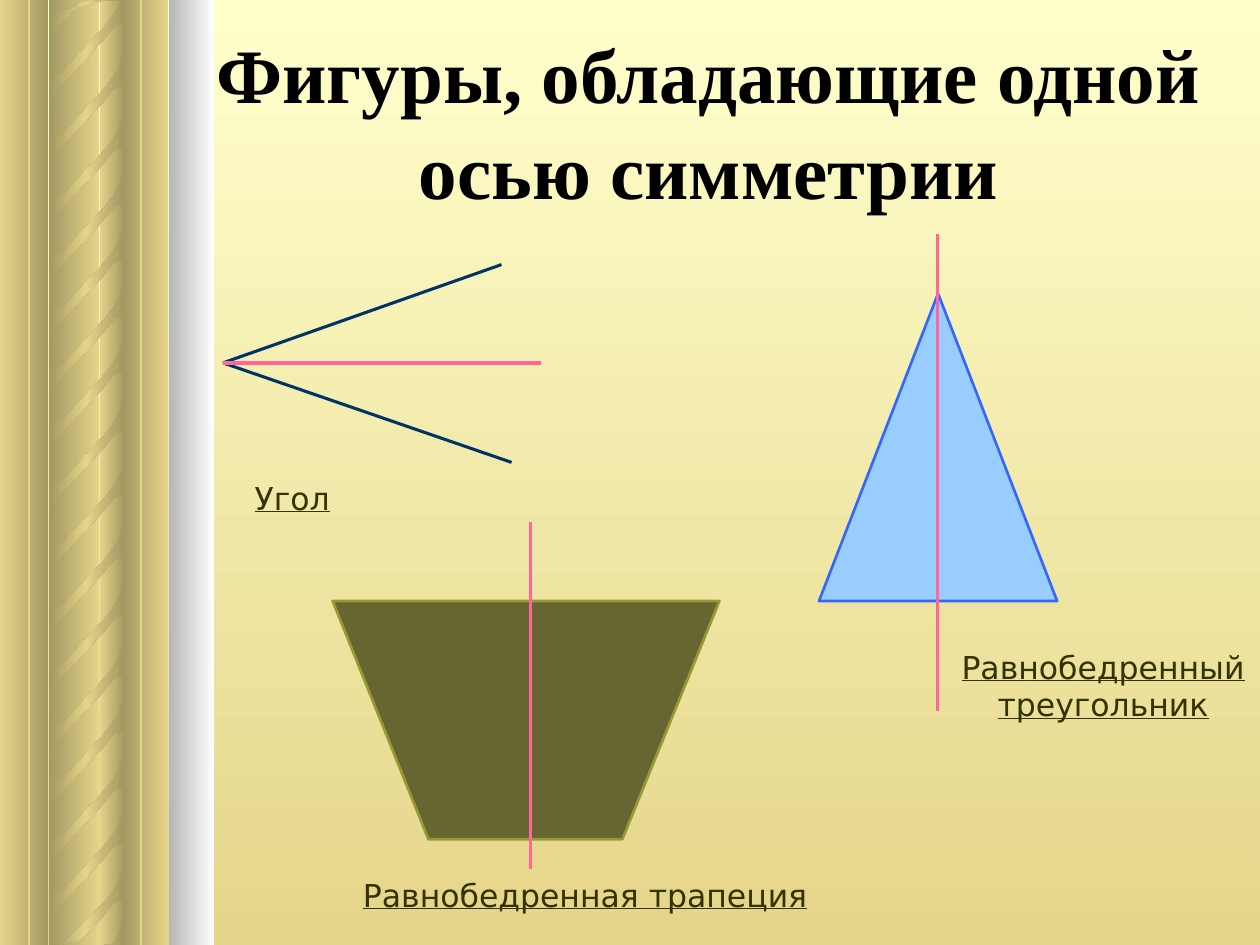
from copy import deepcopy

from pptx import Presentation
from pptx import util as u
from pptx.dml.color import RGBColor
from pptx.enum import shapes, text
from pptx.oxml import ns, xmlchemy

WIDTH, HEIGHT = 10, 7.5
COLORS = {
    "cream": "FFFFCC", "gold": "E5D58A", "bronze": "A49863",
    "silver": "B6B6B6", "white": "FFFFFF", "black": "000000",
    "label": "333300", "axis": "FF6699", "ray": "003366",
    "triangle": "99CCFF", "triangle_edge": "3366FF",
    "trapezoid": "666633", "trapezoid_edge": "999933",
}
COLUMN_BANDS = [
    (0.79, 0.2, "gold", "bronze"), (0, 0.38, "gold", "bronze"),
    (0.39, 0.4, "bronze", "gold"), (0.98, 0.35, "bronze", "gold"),
]
TWIST_TOPS = [
    (0, HEIGHT / 2, [-0.61, -0.12, 0.37, 0.86, 1.31, 1.75, 2.2, 2.64]),
    (0, HEIGHT, [3.12]),
    (3.73, HEIGHT, [3.62, 4.11, 4.58, 5.05, 5.49, 5.94, 6.38, 6.83, 7.25]),
]
TWIST = [
    (0.98, 0.09), (0.98, 0.33), (0.97, 0.32), (0.93, 0.32), (0.91, 0.33),
    (0.88, 0.36), (0.81, 0.45), (0.64, 0.63), (0.47, 0.82), (0.44, 0.87),
    (0.41, 0.93), (0.4, 1.01), (0.39, 1.12), (0.39, 0.63), (0.39, 0.68),
    (0.4, 0.7), (0.42, 0.71), (0.44, 0.71), (0.46, 0.71), (0.49, 0.7),
    (0.83, 0.33), (0.9, 0.24), (0.93, 0.19), (0.95, 0.14), (0.97, 0.06),
    (0.98, 0), (0.98, 0.2),
]


def rgb(name):
    """Return a named colour."""
    return RGBColor.from_string(COLORS[name])


def apply_gradient(fill, element, names, angle=0):
    """Spread the named colours evenly over a linear gradient."""
    fill.gradient()
    fill.gradient_angle = angle
    stops = element.find(".//" + ns.qn("a:gsLst"))
    for _ in names[2:]:
        stops.append(deepcopy(stops[-1]))
    for index, (stop, name) in enumerate(zip(fill.gradient_stops, names)):
        stop.color.rgb = rgb(name)
        stop.position = index / (len(names) - 1)


def paint(shape, *fills, edge=None):
    """Give a shape a solid or gradient fill and an optional outline."""
    shape.shadow.inherit = False
    if len(fills) > 1:
        apply_gradient(shape.fill, shape.element, fills)
    else:
        shape.fill.solid()
        shape.fill.fore_color.rgb = rgb(fills[0])
    if edge:
        shape.line.color.rgb = rgb(edge)
        shape.line.width = u.Pt(1.5)
    else:
        shape.line.fill.background()


def add_preset(slide, kind, left, top, width, height, *fills, edge=None):
    """Add a painted preset shape."""
    box = [u.Inches(value) for value in (left, top, width, height)]
    paint(slide.shapes.add_shape(kind, *box), *fills, edge=edge)


def add_outline(slide, points, *fills, edge=None):
    """Add a painted closed polygon."""
    start, *rest = [(u.Inches(x), u.Inches(y)) for x, y in points]
    builder = slide.shapes.build_freeform(*start, scale=1.0)
    builder.add_line_segments(rest, close=True)
    paint(builder.convert_to_shape(), *fills, edge=edge)


def add_line(slide, start, end, color, width):
    """Add a straight line without shadow."""
    ends = [u.Inches(value) for value in (*start, *end)]
    line = slide.shapes.add_connector(shapes.MSO_CONNECTOR.STRAIGHT, *ends)
    line.line.color.rgb = rgb(color)
    line.line.width = u.Pt(width)
    line.element.spPr.append(xmlchemy.OxmlElement("a:effectLst"))


def write(shape, lines, size=18, font="DejaVu Sans", color="label",
          bold=False, underline=True, wrap=True, spacing=1.0):
    """Write centred paragraphs in one format."""
    frame = shape.text_frame
    frame.word_wrap = wrap
    frame.auto_size = text.MSO_AUTO_SIZE.NONE
    frame.text = "\n".join(lines)
    for paragraph in frame.paragraphs:
        paragraph.alignment = text.PP_ALIGN.CENTER
        paragraph.line_spacing = spacing
        style = paragraph.runs[0].font
        style.size, style.name = u.Pt(size), font
        style.bold, style.underline = bold, underline
        style.color.rgb = rgb(color)


def add_label(slide, left, top, width, height, *lines, wrap=True):
    """Add an underlined caption."""
    box = [u.Inches(value) for value in (left, top, width, height)]
    write(slide.shapes.add_textbox(*box), lines, wrap=wrap)


def add_column(slide):
    """Draw the twisted column along the left edge."""
    rectangle = shapes.MSO_SHAPE.RECTANGLE
    for left, width, *fills in COLUMN_BANDS:
        add_preset(slide, rectangle, left, 0, width, HEIGHT, *fills)
    for upper, lower, tops in TWIST_TOPS:
        for top in tops:
            points = [(x, min(max(top + y, upper), lower)) for x, y in TWIST]
            add_outline(slide, points, "bronze", "gold", "bronze")
    add_preset(slide, rectangle, 1.34, 0, 0.36, HEIGHT, "silver", "white")
    for x in (0.23, 1.12):
        add_line(slide, (x, 0), (x, HEIGHT), "gold", 1)


def add_title(slide):
    """Place and format the title."""
    title = slide.shapes.title
    title.left, title.top = u.Inches(1.53), u.Inches(0.28)
    title.width, title.height = u.Inches(8.19), u.Inches(1.25)
    write(title, ["Фигуры, обладающие одной осью симметрии"], size=44,
          font="Times New Roman", color="black", bold=True,
          underline=False, spacing=1.04)
    title.text_frame.margin_top = u.Inches(0.13)
    title.text_frame.vertical_anchor = text.MSO_ANCHOR.MIDDLE


def add_figures(slide):
    """Draw the three figures with their captions and axes."""
    vertex = (1.77, 2.88)
    add_label(slide, 2.4, 6.9, 4.49, 0.4, "Равнобедренная трапеция")
    add_label(slide, 7.51, 5.09, 2.49, 0.7, "Равнобедренный", "треугольник",
              wrap=False)
    add_preset(slide, shapes.MSO_SHAPE.ISOSCELES_TRIANGLE, 6.5, 2.33, 1.89,
               2.44, "triangle", edge="triangle_edge")
    add_outline(slide, [(2.64, 4.77), (3.4, 6.66), (4.94, 6.66), (5.71, 4.77)],
                "trapezoid", edge="trapezoid_edge")
    for end in ((3.98, 2.1), (4.06, 3.67)):
        add_line(slide, vertex, end, "ray", 1.75)
    add_label(slide, 1.61, 3.75, 1.42, 0.4, "Угол")
    for start, end in (((7.44, 1.86), (7.44, 5.64)),
                       ((4.21, 4.14), (4.21, 6.9)),
                       (vertex, (4.29, 2.88))):
        add_line(slide, start, end, "axis", 2)


def main():
    """Build and save the slide."""
    presentation = Presentation()
    presentation.slide_width = u.Inches(WIDTH)
    presentation.slide_height = u.Inches(HEIGHT)
    slide = presentation.slides.add_slide(presentation.slide_layouts[5])
    apply_gradient(slide.background.fill, slide.element, ("cream", "gold"), 270)
    add_column(slide)
    add_title(slide)
    add_figures(slide)
    presentation.save("out.pptx")


if __name__ == "__main__":
    main()
